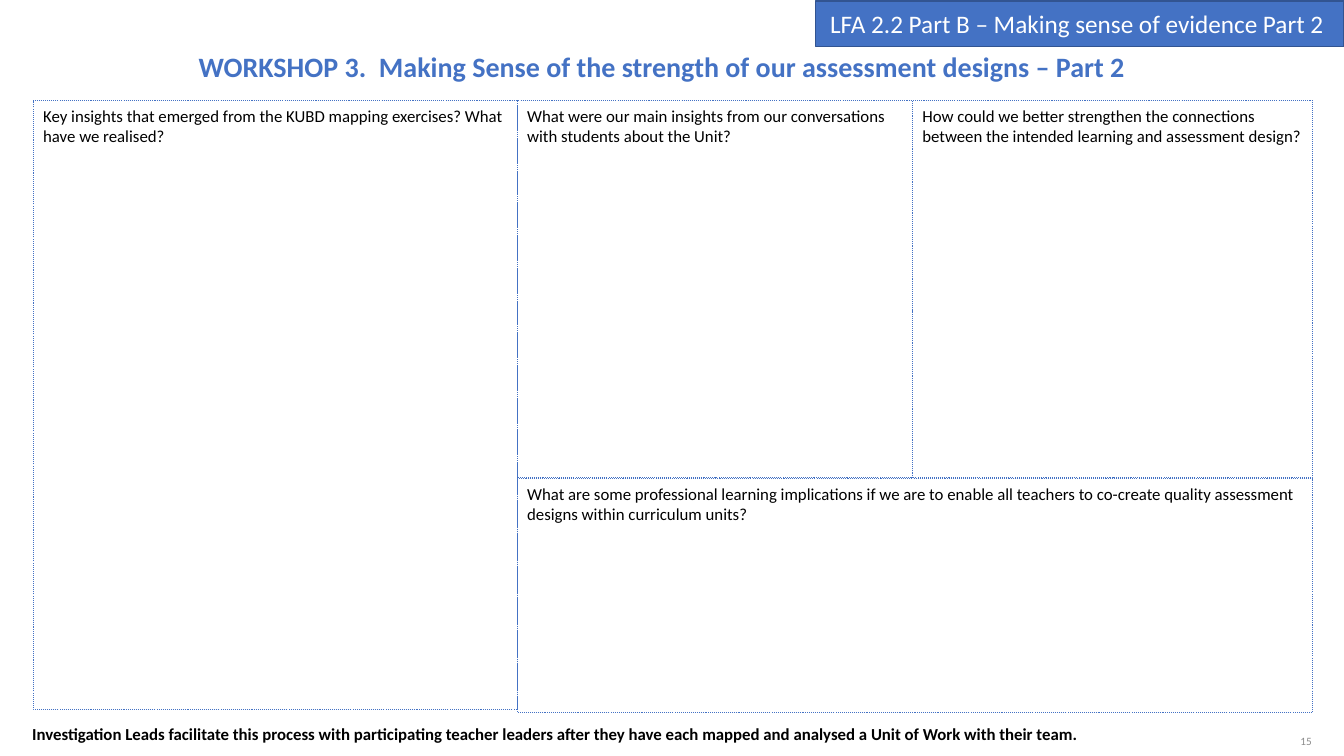
"""Build the workshop slide on making sense of assessment designs."""
from dataclasses import dataclass

from pptx import Presentation
from pptx.dml.color import RGBColor
from pptx.enum.dml import MSO_LINE
from pptx.enum.shapes import MSO_SHAPE
from pptx.enum.text import MSO_ANCHOR, MSO_AUTO_SIZE, PP_ALIGN
from pptx.util import Pt

RECTANGLE = MSO_SHAPE.RECTANGLE
DOTTED = MSO_LINE.ROUND_DOT
TOP, MIDDLE = MSO_ANCHOR.TOP, MSO_ANCHOR.MIDDLE
LEFT, CENTER, RIGHT = PP_ALIGN.LEFT, PP_ALIGN.CENTER, PP_ALIGN.RIGHT
NO_AUTOFIT = MSO_AUTO_SIZE.NONE
EMU_PER_PX = 9144
TITLE_ONLY = 5


@dataclass(frozen=True)
class Theme:
    """Font, colours and type sizes of the slide."""
    font: str = "Calibri"
    accent: str = "4472C4"
    accent_edge: str = "325491"
    ink: str = "000000"
    paper: str = "FFFFFF"
    muted: str = "8C8C8C"
    title_size: int = 20
    banner_size: int = 18
    body_size: int = 12
    number_size: int = 8


@dataclass(frozen=True)
class Box:
    """A rectangle in px."""
    left: int
    top: int
    width: int
    height: int

    def emu(self) -> tuple[int, ...]:
        """Return the four lengths in EMU."""
        return tuple(px(n) for n in (self.left, self.top, self.width, self.height))


@dataclass(frozen=True)
class Panel:
    """A question with room for answers."""
    box: Box
    question: str


THEME = Theme()
GRID_TOP, LOWER_TOP = 100, 475
INSIGHTS_X, STUDENTS_X, DESIGN_X, GRID_RIGHT = 33, 513, 905, 1302
UPPER_HEIGHT = 374
PANELS = (
    Panel(Box(INSIGHTS_X, GRID_TOP, STUDENTS_X - INSIGHTS_X, 604),
          "Key insights that emerged from the KUBD mapping exercises? What have we realised?"),
    Panel(Box(STUDENTS_X, GRID_TOP, DESIGN_X - STUDENTS_X, UPPER_HEIGHT),
          "What were our main insights from our conversations with students about the Unit?"),
    Panel(Box(DESIGN_X, GRID_TOP, GRID_RIGHT - DESIGN_X, UPPER_HEIGHT),
          "How could we better strengthen the connections between the intended learning "
          "and assessment design?"),
    Panel(Box(STUDENTS_X, LOWER_TOP, GRID_RIGHT - STUDENTS_X, 232),
          "What are some professional learning implications if we are to enable all teachers "
          "to co-create quality assessment designs within curriculum units?"),
)


def px(length: int) -> int:
    """Turn px into EMU."""
    return length * EMU_PER_PX


def write(shape, text: str, *, size: int = THEME.body_size, color: str = THEME.ink,
          bold: bool = False, align=LEFT, anchor=TOP) -> None:
    """Put one formatted paragraph in a shape."""
    frame = shape.text_frame
    frame.word_wrap = True
    frame.auto_size = NO_AUTOFIT
    frame.vertical_anchor = anchor
    paragraph = frame.paragraphs[0]
    paragraph.alignment = align
    paragraph.line_spacing = 1.0
    paragraph.space_before = Pt(0)
    run = paragraph.add_run()
    run.text = text
    run.font.name = THEME.font
    run.font.size = Pt(size)
    run.font.bold = bold
    run.font.color.rgb = RGBColor.from_string(color)


def add_rectangle(slide, box: Box, *, edge: str, weight: float, fill: str = "", dash=None):
    """Add an outlined rectangle, filled if a colour is given."""
    rectangle = slide.shapes.add_shape(RECTANGLE, *box.emu())
    rectangle.shadow.inherit = False
    if fill:
        rectangle.fill.solid()
        rectangle.fill.fore_color.rgb = RGBColor.from_string(fill)
    else:
        rectangle.fill.background()
    rectangle.line.color.rgb = RGBColor.from_string(edge)
    rectangle.line.width = Pt(weight)
    if dash is not None:
        rectangle.line.dash_style = dash
    return rectangle


def add_title(slide, box: Box, text: str) -> None:
    """Move and fill the title placeholder."""
    title = slide.shapes.title
    title.left, title.top, title.width, title.height = box.emu()
    write(title, text, size=THEME.title_size, color=THEME.accent, bold=True, align=CENTER)


def main() -> None:
    """Build and save the slide."""
    deck = Presentation()
    deck.slide_width, deck.slide_height = px(1333), px(750)
    slide = deck.slides.add_slide(deck.slide_layouts[TITLE_ONLY])

    add_title(slide, Box(2, 44, 1309, 44),
              "WORKSHOP 3.  Making Sense of the strength of our assessment designs – Part 2")

    page_number = slide.shapes.add_textbox(*Box(1011, 715, 300, 40).emu())
    write(page_number, "15", size=THEME.number_size, color=THEME.muted,
          align=RIGHT, anchor=MIDDLE)

    for panel in PANELS:
        area = add_rectangle(slide, panel.box, edge=THEME.accent, weight=0.75, dash=DOTTED)
        write(area, panel.question)

    facilitation = slide.shapes.add_textbox(*Box(22, 713, 1226, 30).emu())
    write(facilitation,
          "Investigation Leads facilitate this process with participating teacher leaders after "
          "they have each mapped and analysed a Unit of Work with their team.", bold=True)

    banner = add_rectangle(slide, Box(809, 1, 524, 45), edge=THEME.accent_edge,
                           weight=1, fill=THEME.accent)
    write(banner, "LFA 2.2 Part B – Making sense of evidence Part 2 ",
          size=THEME.banner_size, color=THEME.paper, align=CENTER, anchor=MIDDLE)

    deck.save("out.pptx")


if __name__ == "__main__":
    main()
